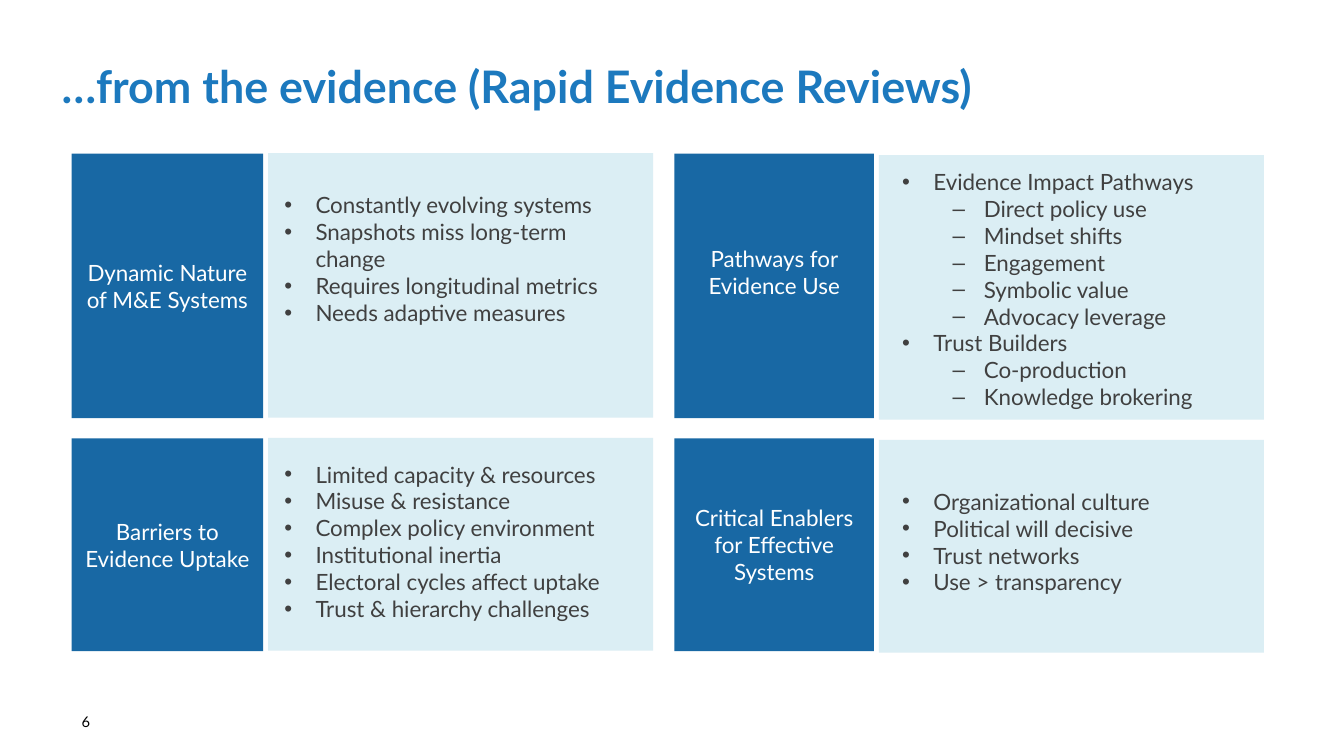
from dataclasses import dataclass
from typing import Any, NamedTuple

from lxml.etree import SubElement
from pptx import Presentation
from pptx.dml.color import RGBColor
from pptx.enum.shapes import MSO_SHAPE
from pptx.enum.text import MSO_ANCHOR, MSO_AUTO_SIZE, PP_ALIGN
from pptx.oxml.ns import qn
from pptx.util import Inches, Pt


@dataclass(frozen=True)
class Theme:
    font: str = "Lato"
    title: str = "1C79BE"
    label: str = "1868A4"
    panel: str = "DBEEF4"
    text: str = "404040"
    white: str = "FFFFFF"
    black: str = "000000"
    big: float = 32
    mid: float = 16
    small: float = 10.5


class Box(NamedTuple):
    """Place and size in percent of the slide."""
    left: float
    top: float
    width: float
    height: float


class Col(NamedTuple):
    label: float
    width: float
    panel: float
    shift: float
    text: float


class Row(NamedTuple):
    top: float
    height: float


@dataclass(frozen=True)
class Card:
    col: int
    row: int
    label: str
    top: float
    width: float
    height: float
    items: tuple[tuple[int, str], ...]
    lift: float = 0


THEME = Theme()
WIDE, HIGH = Inches(13.333), Inches(7.5)
PANEL = 28.65
INDENT = Inches(0.31)
STEP = Inches(0.5)
MARKS = ("•", "–")

COLS = (Col(5.33, 14.25, 19.95, -0.07, 20.4),
        Col(50.18, 14.85, 65.4, 0.2, 66.38))
ROWS = (Row(20.33, 35), Row(58, 28.13))

CARDS = (
    Card(0, 0, "Dynamic Nature of M&E Systems", 24.67, 26.55, 26.53, (
        (0, "Constantly evolving systems"),
        (0, "Snapshots miss long-term change"),
        (0, "Requires longitudinal metrics"),
        (0, "Needs adaptive measures"))),
    Card(1, 0, "Pathways for Evidence Use", 21.6, 27.38, 33.6, (
        (0, "Evidence Impact Pathways"),
        (1, "Direct policy use"),
        (1, "Mindset shifts"),
        (1, "Engagement"),
        (1, "Symbolic value"),
        (1, "Advocacy leverage"),
        (0, "Trust Builders"),
        (1, "Co-production"),
        (1, "Knowledge brokering")), lift=0.27),
    Card(0, 1, "Barriers to Evidence Uptake", 60.27, 28.13, 22.93, (
        (0, "Limited capacity & resources"),
        (0, "Misuse & resistance"),
        (0, "Complex policy environment"),
        (0, "Institutional inertia"),
        (0, "Electoral cycles affect uptake"),
        (0, "Trust & hierarchy challenges"))),
    Card(1, 1, "Critical Enablers for Effective Systems", 63.87, 23.63, 15.73, (
        (0, "Organizational culture"),
        (0, "Political will decisive"),
        (0, "Trust networks"),
        (0, "Use > transparency"))),
)


def apply(item: Any, form: dict[str, Any]) -> None:
    for name, value in form.items():
        setattr(item, name, value)


def spots(box: Box) -> dict[str, int]:
    return {"left": round(WIDE * box.left / 100),
            "top": round(HIGH * box.top / 100),
            "width": round(WIDE * box.width / 100),
            "height": round(HIGH * box.height / 100)}


def write(para: Any, text: str, size: float, color: str,
          bold: bool = False, align: Any = PP_ALIGN.LEFT) -> None:
    apply(para, {"alignment": align, "space_before": Pt(0)})
    run = para.add_run()
    run.text = text
    apply(run.font, {"name": THEME.font, "size": Pt(size), "bold": bold})
    run.font.color.rgb = RGBColor.from_string(color)


def frame(shape: Any, anchor: Any = MSO_ANCHOR.MIDDLE, **form: Any) -> Any:
    apply(shape.text_frame, {"word_wrap": True, "vertical_anchor": anchor,
                             "auto_size": MSO_AUTO_SIZE.NONE, **form})
    return shape.text_frame


def block(slide: Any, box: Box, color: str) -> Any:
    shape = slide.shapes.add_shape(MSO_SHAPE.RECTANGLE, **spots(box))
    shape.shadow.inherit = False
    shape.fill.solid()
    shape.fill.fore_color.rgb = RGBColor.from_string(color)
    shape.line.fill.background()
    return shape


def bullet(para: Any, level: int) -> None:
    para.level = level
    props = para._p.get_or_add_pPr()
    props.set("marL", str(INDENT + level * STEP))
    props.set("indent", str(-INDENT))
    SubElement(props, qn("a:buFont")).set("typeface", "Arial")
    SubElement(props, qn("a:buChar")).set("char", MARKS[level])


def draw(slide: Any, card: Card, holder: Any) -> None:
    col, row = COLS[card.col], ROWS[card.row]

    # Pale panel and dark label
    block(slide, Box(col.panel, row.top + col.shift, PANEL, row.height),
          THEME.panel)
    label = block(slide, Box(col.label, row.top, col.width, row.height),
                  THEME.label)
    words = frame(label, margin_bottom=Inches(0.05 + card.lift))
    write(words.paragraphs[0], card.label, THEME.mid, THEME.white,
          align=PP_ALIGN.CENTER)

    # List, brought in front of its panel
    apply(holder, spots(Box(col.text, card.top, card.width, card.height)))
    holder.element.getparent().append(holder.element)
    words = frame(holder, MSO_ANCHOR.TOP)
    for spot, (level, text) in enumerate(card.items):
        para = words.add_paragraph() if spot else words.paragraphs[0]
        bullet(para, level)
        write(para, text, THEME.mid, THEME.text)


def main() -> None:
    deck = Presentation()
    apply(deck, {"slide_width": WIDE, "slide_height": HIGH})
    # The comparison layout has a title and four body placeholders
    slide = deck.slides.add_slide(deck.slide_layouts[4])
    title, *lists = slide.placeholders

    # Title
    apply(title, spots(Box(4.58, 5.73, 80.55, 11.07)))
    write(frame(title, margin_left=0).paragraphs[0],
          "…from the evidence (Rapid Evidence Reviews)",
          THEME.big, THEME.title, bold=True)

    # Cards
    for card, holder in zip(CARDS, lists):
        draw(slide, card, holder)

    # Page number
    page = slide.shapes.add_textbox(**spots(Box(5.33, 92.8, 22.5, 5.33)))
    write(frame(page).paragraphs[0], "6", THEME.small, THEME.black)

    deck.save("out.pptx")


if __name__ == "__main__":
    main()
